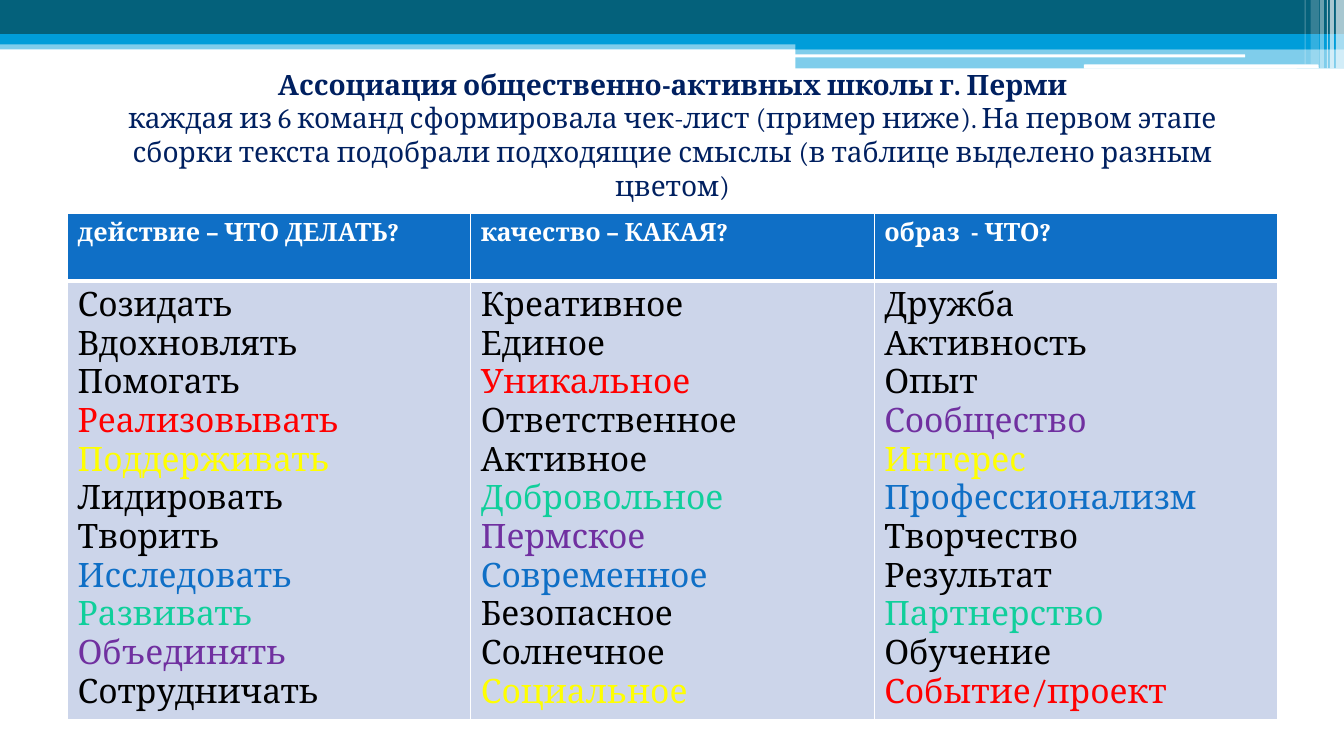
from lxml.etree import SubElement
from pptx import Presentation
from pptx.dml.color import RGBColor
from pptx.enum.shapes import MSO_SHAPE as SHAPE
from pptx.enum.text import MSO_ANCHOR as ANCHOR, MSO_AUTO_SIZE as AUTO_SIZE, PP_ALIGN as ALIGN
from pptx.oxml.ns import qn
from pptx.util import Pt

PX = 9144  # 100 px to the inch
FONT = "Cambria"
WHITE, BLACK, NAVY = "FFFFFF", "000000", "002060"
TEAL, CYAN, BLUE, PALE = "04617B", "009DD9", "0F6FC6", "CCD5EA"

# left, top, width, height, colour, opacity in percent
BARS = [
    (0, 40, 1333, 9, CYAN, 50),
    (0, 0, 1333, 34, TEAL, 100),
    (0, 34, 1333, 10, CYAN, 100),
    (789, 39, 544, 10, CYAN, 100),
    (789, 48, 544, 20, CYAN, 50),
]
ROUNDED_BARS = [
    (788, 54, 447, 3, WHITE, 100),
    (1075, 64, 233, 4, WHITE, 100),
]
STRIPES = [
    (1325, 0, 8, 68, WHITE, 65),
    (1319, 0, 4, 68, WHITE, 65),
    (1316, 0, 1, 68, WHITE, 60),
    (1309, 0, 4, 68, WHITE, 40),
    (1300, 0, 8, 64, WHITE, 20),
    (1294, 0, 1, 64, WHITE, 30),
]

TITLE = "Ассоциация общественно-активных школы г. Перми"
SUBTITLE = ("каждая из 6 команд сформировала чек-лист (пример ниже). "
            "На первом этапе сборки текста подобрали подходящие смыслы "
            "(в таблице выделено разным цветом)")

COLUMNS = {
    "действие – ЧТО ДЕЛАТЬ?": [
        "Созидать", "Вдохновлять", "Помогать", "Реализовывать", "Поддерживать",
        "Лидировать", "Творить", "Исследовать", "Развивать", "Объединять",
        "Сотрудничать"],
    "качество – КАКАЯ?": [
        "Креативное", "Единое", "Уникальное", "Ответственное", "Активное",
        "Добровольное", "Пермское", "Современное", "Безопасное", "Солнечное",
        "Социальное"],
    "образ  - ЧТО?": [
        "Дружба", "Активность", "Опыт", "Сообщество", "Интерес",
        "Профессионализм", "Творчество", "Результат", "Партнерство", "Обучение",
        "Событие/проект"],
}
PHRASES = {
    "FF0000": ["Реализовывать", "Уникальное", "Событие/проект"],
    "FFFF00": ["Поддерживать", "Социальное", "Интерес"],
    BLUE: ["Исследовать", "Современное", "Профессионализм"],
    "10CF9B": ["Развивать", "Добровольное", "Партнерство"],
    "7030A0": ["Объединять", "Пермское", "Сообщество"],
}
WORD_COLORS = {word: color for color, words in PHRASES.items() for word in words}


def px(*lengths):
    return [length * PX for length in lengths]


def rgb(color):
    return RGBColor.from_string(color)


def add_run(p, text, size, color, bold=False):
    r = p.add_run()
    r.text = text
    for name, value in {"name": FONT, "size": Pt(size), "bold": bold}.items():
        setattr(r.font, name, value)
    r.font.color.rgb = rgb(color)


def add_bar(slide, bar, kind=SHAPE.RECTANGLE):
    *box, color, opacity = bar
    sp = slide.shapes.add_shape(kind, *px(*box))
    sp.shadow.inherit = False
    sp.line.fill.background()
    sp.fill.solid()
    sp.fill.fore_color.rgb = rgb(color)
    if opacity < 100:
        clr = sp.fill._xPr.find(f".//{qn('a:srgbClr')}")
        SubElement(clr, qn("a:alpha"), val=str(opacity * 1000))


def set_title(slide):
    sp = slide.shapes.title
    sp.left, sp.top, sp.width, sp.height = px(67, 70, 1200, 127)
    tf = sp.text_frame
    formats = {"word_wrap": True, "auto_size": AUTO_SIZE.NONE,
               "vertical_anchor": ANCHOR.MIDDLE}
    for name, value in formats.items():
        setattr(tf, name, value)
    p = tf.paragraphs[0]
    p.alignment = ALIGN.CENTER
    add_run(p, TITLE, 20, NAVY, bold=True)
    p.add_line_break()
    add_run(p, SUBTITLE, 20, NAVY)


def style_cell(cell, fill, top, bottom):
    """Fill the cell and give it white borders, with top and bottom widths in points."""
    tc_pr = cell._tc.get_or_add_tcPr()
    for side, width in {"L": 1, "R": 1, "T": top, "B": bottom}.items():
        ln = SubElement(tc_pr, qn(f"a:ln{side}"), w=str(Pt(width)))
        solid = SubElement(ln, qn("a:solidFill"))
        SubElement(solid, qn("a:srgbClr"), val=WHITE)
    cell.fill.solid()
    cell.fill.fore_color.rgb = rgb(fill)


def add_word_table(slide):
    table = slide.shapes.add_table(2, len(COLUMNS), *px(67, 212, 1200, 502)).table
    table.rows[0].height, table.rows[1].height = px(67, 435)
    for col, (heading, words) in enumerate(COLUMNS.items()):
        head, body = table.cell(0, col), table.cell(1, col)
        style_cell(head, BLUE, top=1, bottom=3)
        style_cell(body, PALE, top=3, bottom=1)
        add_run(head.text_frame.paragraphs[0], heading, 18, WHITE, bold=True)
        tf = body.text_frame
        for i, word in enumerate(words):
            p = tf.add_paragraph() if i else tf.paragraphs[0]
            add_run(p, word, 24, WORD_COLORS.get(word, BLACK))


def main():
    prs = Presentation()
    prs.slide_width, prs.slide_height = px(1333, 750)
    slide = prs.slides.add_slide(prs.slide_layouts[5])
    for bar in BARS:
        add_bar(slide, bar)
    for bar in ROUNDED_BARS:
        add_bar(slide, bar, SHAPE.ROUNDED_RECTANGLE)
    for stripe in STRIPES:
        add_bar(slide, stripe)
    set_title(slide)
    add_word_table(slide)
    prs.save("out.pptx")


if __name__ == "__main__":
    main()
